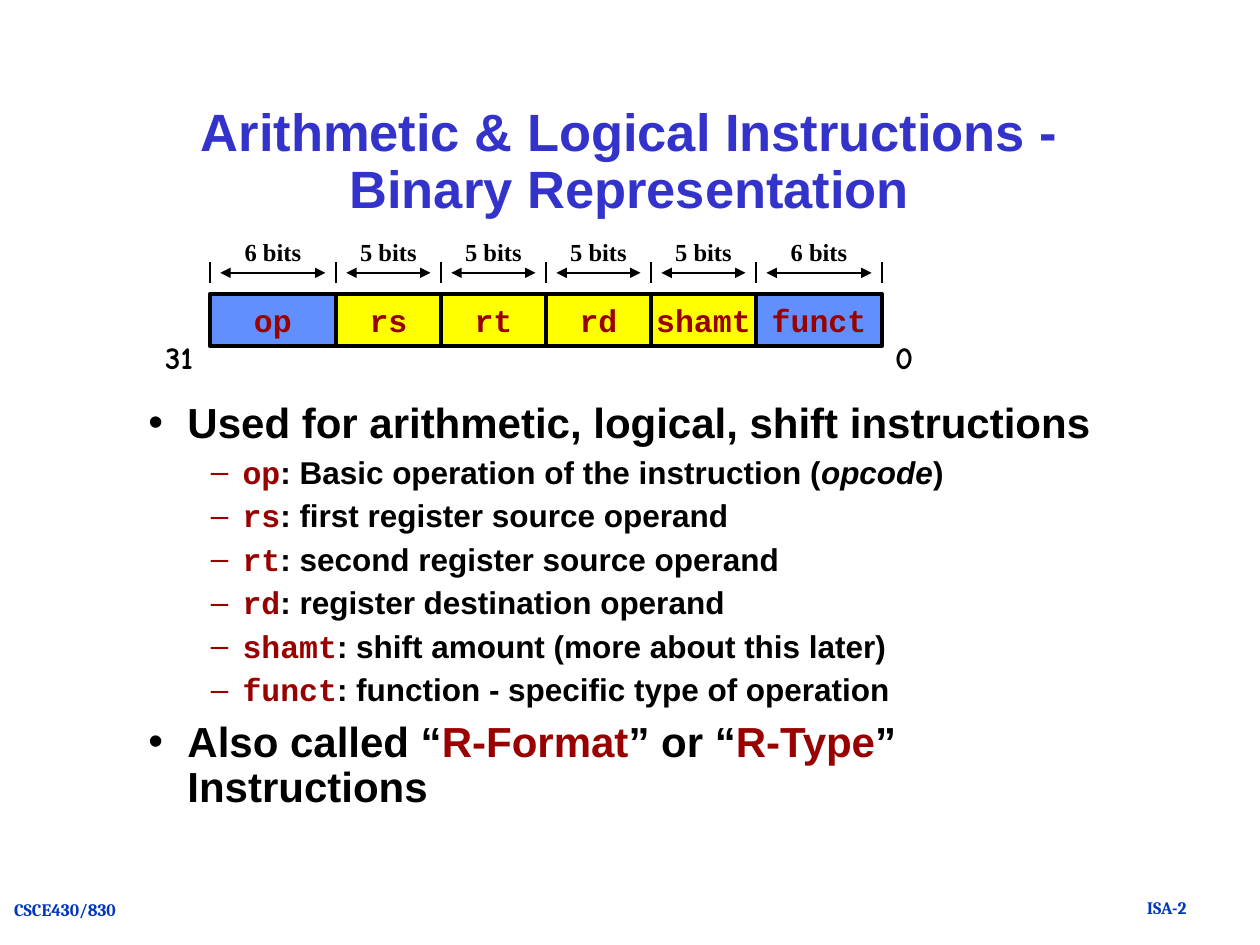
from dataclasses import dataclass
from itertools import accumulate

from lxml import etree
from pptx import Presentation
from pptx.dml.color import RGBColor
from pptx.enum.shapes import MSO_CONNECTOR, MSO_SHAPE
from pptx.enum.text import MSO_ANCHOR, PP_ALIGN
from pptx.oxml.ns import qn
from pptx.util import Cm, Pt

STRAIGHT = MSO_CONNECTOR.STRAIGHT
RECTANGLE = MSO_SHAPE.RECTANGLE
TOP, MIDDLE = MSO_ANCHOR.TOP, MSO_ANCHOR.MIDDLE
CENTER = PP_ALIGN.CENTER


@dataclass(frozen=True)
class TextStyle:
    font: str
    size: float
    color: str
    italic: bool = False


@dataclass(frozen=True)
class Theme:
    black: str = "000000"
    end_field: str = "618FFD"
    middle_field: str = "FFFF00"
    title: TextStyle = TextStyle("Arial", 30, "3333CC")
    point: TextStyle = TextStyle("Arial", 24, "000000")
    term: TextStyle = TextStyle("Arial", 24, "990000")
    detail: TextStyle = TextStyle("Arial", 18, "000000")
    emphasis: TextStyle = TextStyle("Arial", 18, "000000", italic=True)
    code: TextStyle = TextStyle("Courier New", 18, "990000")
    bits: TextStyle = TextStyle("Times New Roman", 14, "000000")
    bit_number: TextStyle = TextStyle("Comic Neue", 18, "000000")
    footer: TextStyle = TextStyle("Cambria", 10, "0237BC")


THEME = Theme()

# name, bits, fill
FIELDS = [
    ("op", 6, THEME.end_field),
    ("rs", 5, THEME.middle_field),
    ("rt", 5, THEME.middle_field),
    ("rd", 5, THEME.middle_field),
    ("shamt", 5, THEME.middle_field),
    ("funct", 6, THEME.end_field),
]
MEANINGS = [
    ("op", [(": Basic operation of the instruction (", THEME.detail),
            ("opcode", THEME.emphasis), (")", THEME.detail)]),
    ("rs", [(": first register source operand", THEME.detail)]),
    ("rt", [(": second register source operand", THEME.detail)]),
    ("rd", [(": register destination operand", THEME.detail)]),
    ("shamt", [(": shift amount (more about this later)", THEME.detail)]),
    ("funct", [(": function - specific type of operation", THEME.detail)]),
]
USE = [("Used for arithmetic, logical, shift instructions", THEME.point)]
OTHER_NAMES = [
    ("Also called “", THEME.point), ("R-Format", THEME.term),
    ("” or “", THEME.point), ("R-Type", THEME.term),
    ("” Instructions", THEME.point),
]


def add_run(paragraph, text, style):
    run = paragraph.add_run()
    run.text = text
    run.font.name = style.font
    run.font.size = Pt(style.size)
    run.font.bold = True
    run.font.italic = style.italic
    run.font.color.rgb = RGBColor.from_string(style.color)


def fill_frame(frame, text, style, anchor, wrap):
    frame.word_wrap = wrap
    frame.vertical_anchor = anchor
    paragraph = frame.paragraphs[0]
    paragraph.alignment = CENTER
    add_run(paragraph, text, style)
    return paragraph


def add_label(slide, box, text, style, anchor=TOP, wrap=False):
    frame = slide.shapes.add_textbox(*box).text_frame
    return fill_frame(frame, text, style, anchor, wrap)


def add_line(slide, start, end, arrows=False):
    line = slide.shapes.add_connector(STRAIGHT, *start, *end)
    line.line.color.rgb = RGBColor.from_string(THEME.black)
    line.line.width = Pt(1)
    if arrows:
        outline = line.line._get_or_add_ln()
        for side in ("a:headEnd", "a:tailEnd"):
            etree.SubElement(outline, qn(side), type="triangle")
    etree.SubElement(line._element.spPr, qn("a:effectLst"))


def add_field(slide, box, name, color):
    field = slide.shapes.add_shape(RECTANGLE, *box)
    field.shadow.inherit = False
    field.fill.solid()
    field.fill.fore_color.rgb = RGBColor.from_string(color)
    field.line.color.rgb = RGBColor.from_string(THEME.black)
    field.line.width = Pt(2.25)
    fill_frame(field.text_frame, name, THEME.code, MIDDLE, wrap=False)


def add_instruction_word(slide, left, top, width, height):
    """Draw the fields to scale, with their bit counts above and end bits below."""
    widths = [bits for _, bits, _ in FIELDS]
    edges = [left + width * bit // sum(widths)
             for bit in accumulate(widths, initial=0)]
    tick_top, arrow_y, tick_bottom = (top + Cm(y) for y in (0.64, 0.85, 1.06))
    field_top, gap = top + Cm(1.27), Cm(0.21)
    field_height = height - Cm(1.27)

    for (name, bits, color), start, end in zip(FIELDS, edges, edges[1:]):
        add_field(slide, (start, field_top, end - start, field_height), name, color)
        add_line(slide, (start + gap, arrow_y), (end - gap, arrow_y), arrows=True)
        add_label(slide, (start, top, end - start, Cm(0.85)),
                  f"{bits} bits", THEME.bits)
    for edge in edges:
        add_line(slide, (edge, tick_bottom), (edge, tick_top))

    number_top = top + height - Cm(0.3)
    add_label(slide, (left - Cm(1.27), number_top, Cm(1.3), Cm(1.02)),
              str(sum(widths) - 1), THEME.bit_number)
    add_label(slide, (left + width, number_top, Cm(0.89), Cm(1.02)),
              "0", THEME.bit_number)


def add_bullet(paragraph, runs, mark, margin, hanging):
    paragraph.line_spacing = 0.9
    paragraph.space_before = Pt(0.3 * runs[0][1].size)
    properties = paragraph._p.get_or_add_pPr()
    properties.set("marL", str(margin))
    properties.set("indent", str(-hanging))
    etree.SubElement(properties, qn("a:buFont"), typeface="Arial")
    etree.SubElement(properties, qn("a:buChar"), char=mark)
    for text, style in runs:
        add_run(paragraph, text, style)


def add_explanation(slide, left, top, width, height):
    frame = slide.shapes.add_textbox(left, top, width, height).text_frame
    frame.word_wrap = True
    add_bullet(frame.paragraphs[0], USE, "•", Cm(0.79), Cm(0.79))
    for name, meaning in MEANINGS:
        paragraph = frame.add_paragraph()
        paragraph.level = 1
        add_bullet(paragraph, [(name, THEME.code), *meaning],
                   "–", Cm(1.9), Cm(0.64))
    add_bullet(frame.add_paragraph(), OTHER_NAMES, "•", Cm(0.79), Cm(0.79))


def add_title(slide, left, top, width, height):
    title = add_label(slide, (left, top, width, height),
                      "Arithmetic & Logical Instructions - Binary Representation",
                      THEME.title, MIDDLE, wrap=True)
    title.line_spacing = 0.9


def add_footer(slide, left, top, width, height):
    add_label(slide, (left, top + Cm(0.03), Cm(2.62), height),
              "CSCE430/830", THEME.footer)
    add_label(slide, (left + width - Cm(1.42), top, Cm(1.42), height),
              "ISA-2", THEME.footer)


def main():
    presentation = Presentation()
    presentation.slide_width, presentation.slide_height = Cm(25.4), Cm(19.05)
    slide = presentation.slides.add_slide(presentation.slide_layouts[6])
    add_footer(slide, Cm(0), Cm(17.96), Cm(24.23), Cm(0.66))
    add_title(slide, Cm(2.74), Cm(1.7), Cm(19.9), Cm(3.18))
    add_explanation(slide, Cm(2.74), Cm(7.98), Cm(19.9), Cm(8.59))
    add_instruction_word(slide, Cm(4.23), Cm(4.65), Cm(13.55), Cm(2.33))
    presentation.save("out.pptx")


if __name__ == "__main__":
    main()
